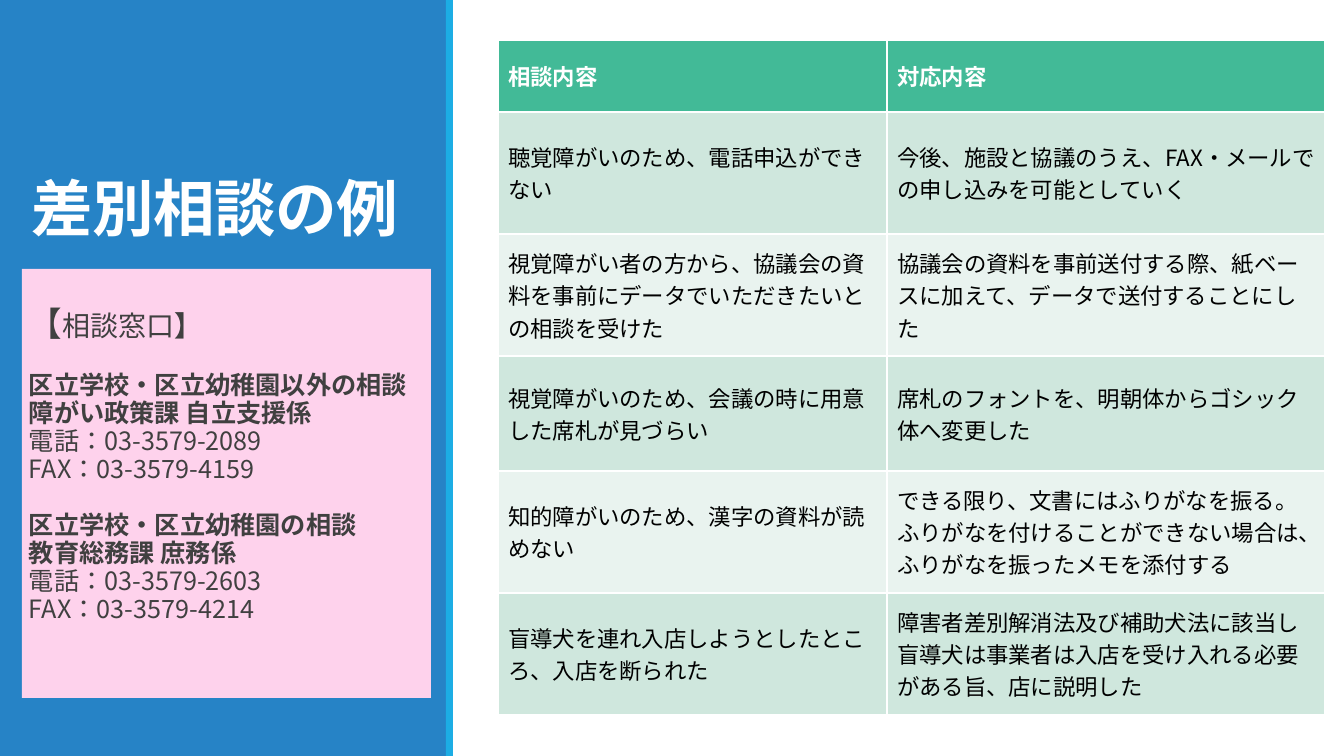
from pptx import Presentation
from pptx import util as u
from pptx.dml.color import RGBColor
from pptx.enum import lang, shapes, text
from pptx.oxml.ns import qn

FONT = "Noto Sans CJK JP"
WHITE, BLACK, GREY = "FFFFFF", "000000", "404040"
HEADER_FILL, BAND_FILLS = "42BA97", ("CFE7DD", "E9F3EF")

TITLE = "差別相談の例"
HEADING = [("【", 24, False), ("相談窓口", 20, False), ("】", 20, True)]
CONTACTS = [
    ("区立学校・区立幼稚園以外の相談", "障がい政策課 自立支援係",
     "電話：03-3579-2089", "FAX：03-3579-4159"),
    ("区立学校・区立幼稚園の相談", "教育総務課 庶務係",
     "電話：03-3579-2603", "FAX：03-3579-4214"),
]
CASES = [
    ("相談内容", "対応内容"),
    ("聴覚障がいのため、電話申込ができない",
     "今後、施設と協議のうえ、FAX・メールでの申し込みを可能としていく"),
    ("視覚障がい者の方から、協議会の資料を事前にデータでいただきたいとの相談を受けた",
     "協議会の資料を事前送付する際、紙ベースに加えて、データで送付することにした"),
    ("視覚障がいのため、会議の時に用意した席札が見づらい",
     "席札のフォントを、明朝体からゴシック体へ変更した"),
    ("知的障がいのため、漢字の資料が読めない",
     "できる限り、文書にはふりがなを振る。ふりがなを付けることができない場合は、ふりがなを振ったメモを添付する"),
    ("盲導犬を連れ入店しようとしたところ、入店を断られた",
     "障害者差別解消法及び補助犬法に該当し盲導犬は事業者は入店を受け入れる必要がある旨、店に説明した"),
]

# Lengths in px: left, top, width, height
SLIDE_SIZE = (1344, 756)
PANELS = [((0, 0, 447, 756), "2683C6"), ((446, 0, 7, 756), "1CADE4")]
TITLE_BOX = (22, 176, 399, 149)
CONTACT_BOX = (22, 269, 409, 429)
TABLE_CORNER = (498, 40)
COLUMN_WIDTHS = (389, 438)
ROW_HEIGHTS = (72, 122, 122, 115, 122, 122)


def px(length):
    return u.Emu(round(length * 914400 / 100.8))


def color(value):
    return RGBColor.from_string(value)


def paint(fill, value):
    fill.solid()
    fill.fore_color.rgb = color(value)


def place(shape, box):
    shape.left, shape.top, shape.width, shape.height = map(px, box)


def set_frame(frame, anchor, left, top, right, bottom):
    frame.word_wrap = True
    frame.auto_size = text.MSO_AUTO_SIZE.NONE
    frame.vertical_anchor = anchor
    frame.margin_left, frame.margin_top = px(left), px(top)
    frame.margin_right, frame.margin_bottom = px(right), px(bottom)


def write(paragraph, words, size=16, ink=BLACK, bold=False, tracking=0):
    """Add one run; tracking is in hundredths of a point."""
    run = paragraph.add_run()
    run.text = words
    font = run.font
    font.size, font.bold, font.name = u.Pt(size), bold, FONT
    font.color.rgb = color(ink)
    font.language_id = lang.MSO_LANGUAGE_ID.JAPANESE
    properties = run._r.get_or_add_rPr()
    properties.set("spc", str(tracking))
    east_asian = properties.makeelement(qn("a:ea"), {"typeface": FONT})
    properties.find(qn("a:latin")).addnext(east_asian)


def format_paragraph(paragraph, line_spacing, space_before=0):
    paragraph.alignment = text.PP_ALIGN.LEFT
    paragraph.line_spacing = line_spacing
    paragraph.space_before = u.Pt(space_before)
    paragraph.space_after = u.Pt(0)


def add_panels(slide, title):
    for box, fill in PANELS:
        panel = slide.shapes.add_shape(shapes.MSO_SHAPE.RECTANGLE, *map(px, box))
        paint(panel.fill, fill)
        panel.line.fill.background()
        panel.shadow.inherit = False
        title.element.addprevious(panel.element)


def fill_title(title):
    place(title, TITLE_BOX)
    set_frame(title.text_frame, text.MSO_ANCHOR.TOP, 10, 5, 10, 5)
    paragraph = title.text_frame.paragraphs[0]
    format_paragraph(paragraph, 0.85)
    write(paragraph, TITLE, size=44, ink=WHITE, bold=True, tracking=-50)


def fill_contacts(body):
    place(body, CONTACT_BOX)
    paint(body.fill, "FED2EC")
    frame = body.text_frame
    set_frame(frame, text.MSO_ANCHOR.MIDDLE, 7, 4, 7, 32)
    paragraph = frame.paragraphs[0]
    format_paragraph(paragraph, u.Pt(20))
    for words, size, bold in HEADING:
        write(paragraph, words, size=size, ink=GREY, bold=bold)
    for contact in CONTACTS:
        for index, words in enumerate(contact):
            paragraph = frame.add_paragraph()
            format_paragraph(paragraph, u.Pt(20), 0 if index else 20)
            write(paragraph, words, size=18, ink=GREY, bold=index < 2)


def add_cases(slide):
    box = (*TABLE_CORNER, sum(COLUMN_WIDTHS), sum(ROW_HEIGHTS))
    table = slide.shapes.add_table(len(CASES), len(COLUMN_WIDTHS), *map(px, box)).table
    for column, width in zip(table.columns, COLUMN_WIDTHS):
        column.width = px(width)
    for index, (row, height, case) in enumerate(zip(table.rows, ROW_HEIGHTS, CASES)):
        row.height = px(height)
        header = index == 0
        for cell, words in zip(row.cells, case):
            paint(cell.fill, HEADER_FILL if header else BAND_FILLS[(index - 1) % 2])
            cell.vertical_anchor = text.MSO_ANCHOR.MIDDLE
            write(cell.text_frame.paragraphs[0], words,
                  ink=WHITE if header else BLACK, bold=header)


def main():
    presentation = Presentation()
    presentation.slide_width, presentation.slide_height = map(px, SLIDE_SIZE)
    caption_layout = presentation.slide_layouts[7]
    slide = presentation.slides.add_slide(caption_layout)
    title, content, body = slide.placeholders
    content.element.getparent().remove(content.element)
    add_panels(slide, title)
    fill_title(title)
    add_cases(slide)
    fill_contacts(body)
    presentation.save("out.pptx")


if __name__ == "__main__":
    main()
